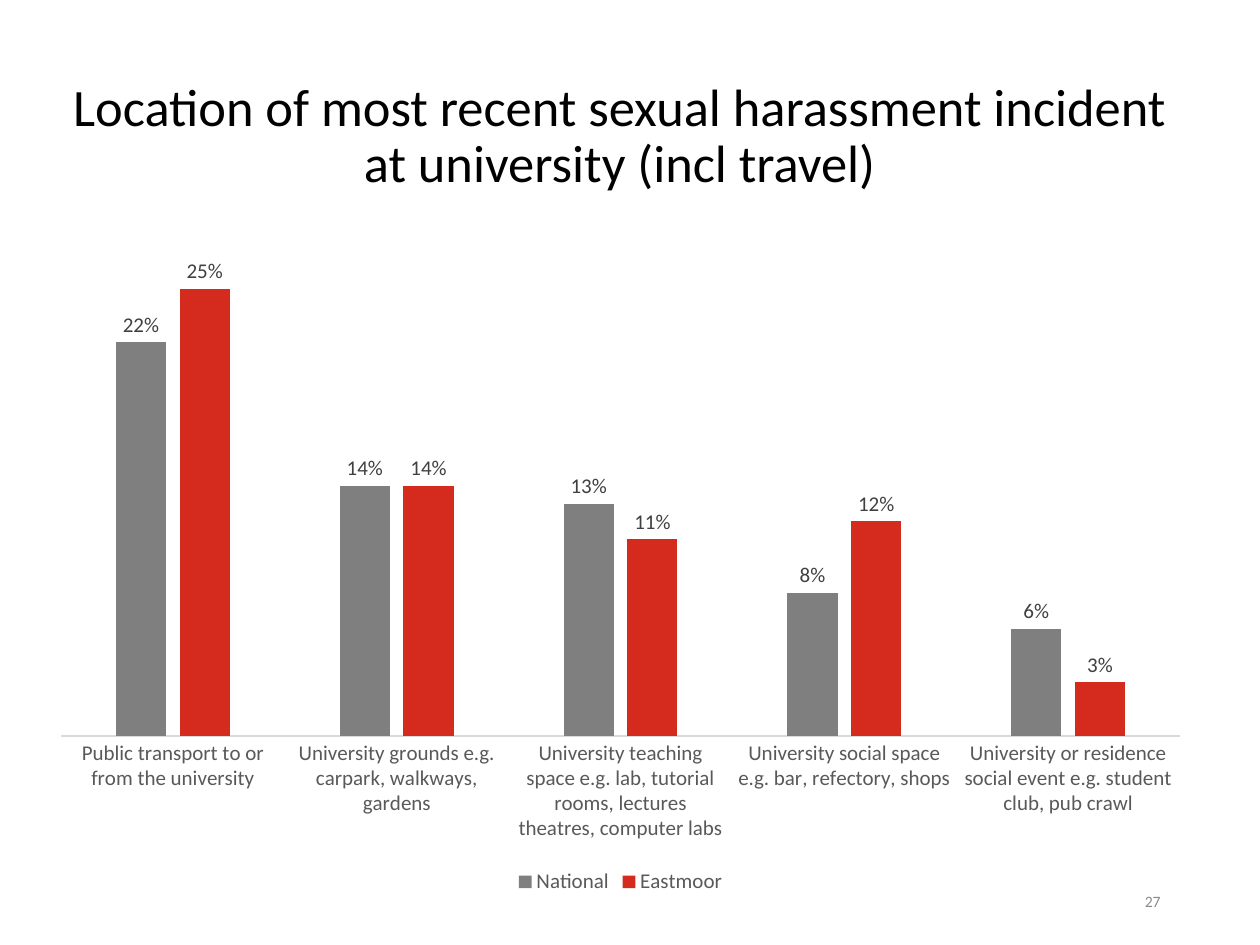
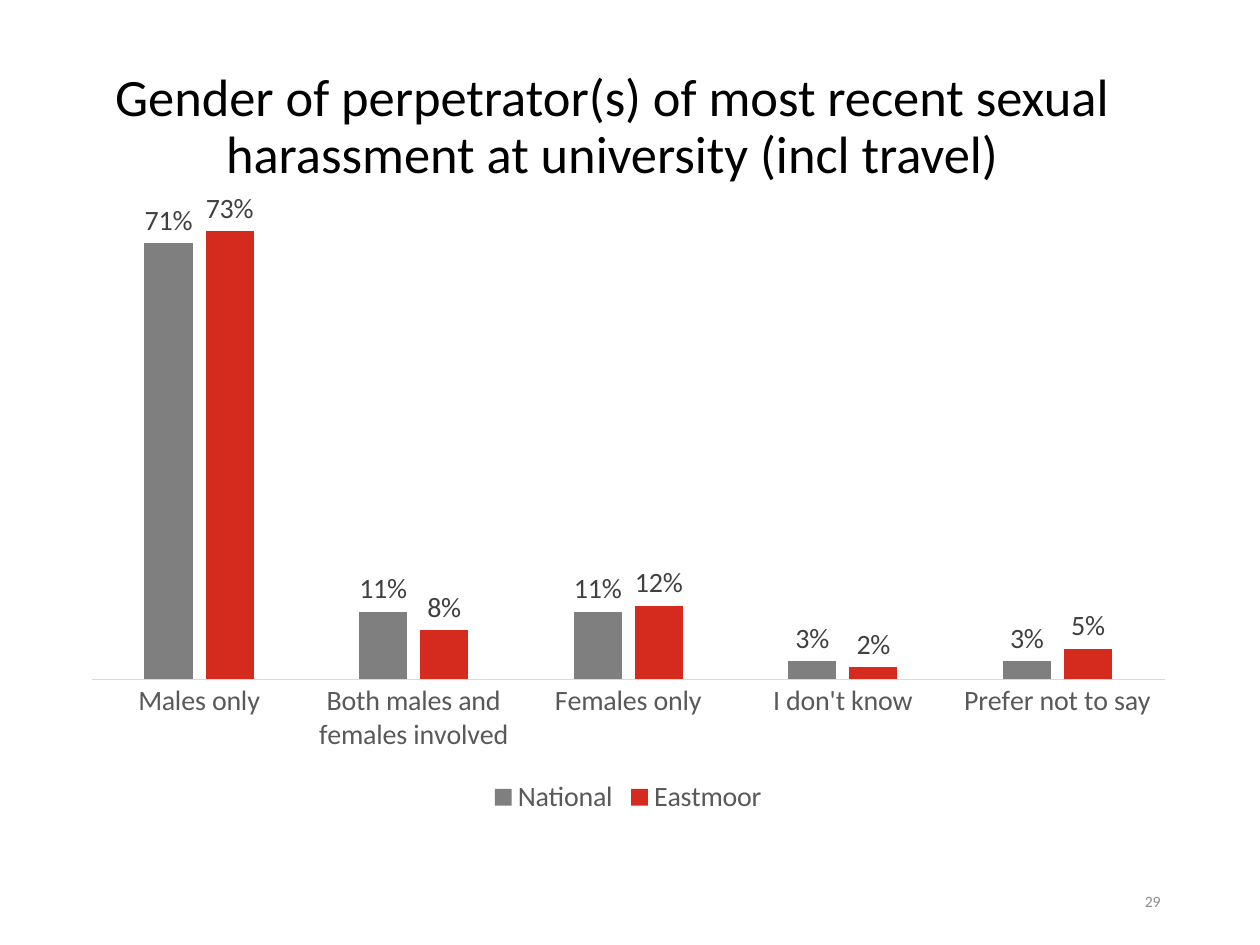
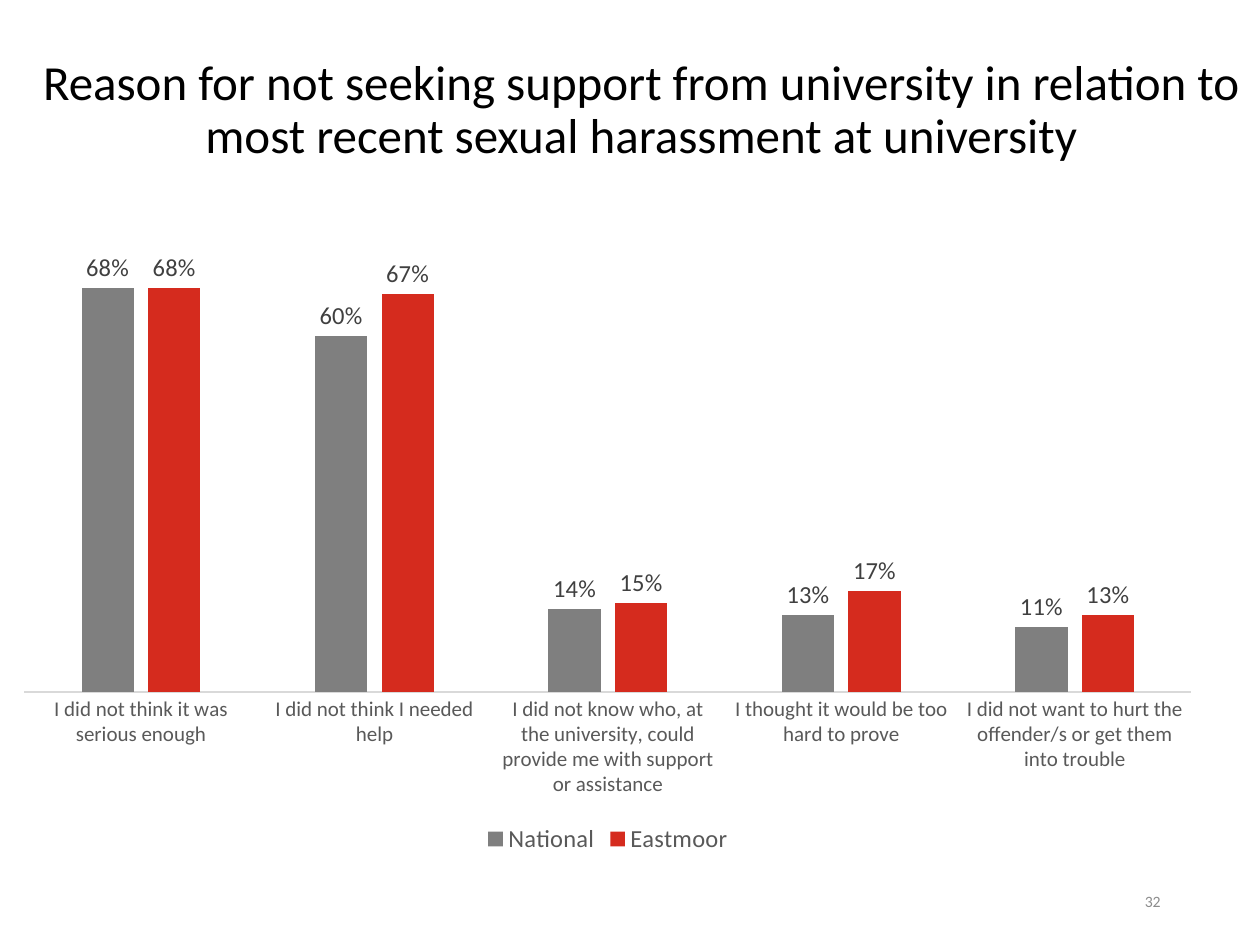
from pptx import Presentation
from pptx.chart.data import CategoryChartData
from pptx.dml.color import RGBColor
from pptx.enum.chart import XL_CHART_TYPE, XL_LABEL_POSITION, XL_LEGEND_POSITION, XL_TICK_MARK
from pptx.enum.text import MSO_ANCHOR, MSO_AUTO_SIZE, PP_ALIGN
from pptx.util import Cm, Pt

FONT = "Calibri"
BLACK, AXIS_TEXT, LABEL_TEXT = "000000", "595959", "404040"
AXIS_LINE, PAGE_NUMBER = "D9D9D9", "8C8C8C"
SERIES = [("National", "7F7F7F"), ("Eastmoor", "D52B1E")]
PERCENT = "0%"


def rgb(color):
    return RGBColor.from_string(color)


def style_font(font, size, color):
    font.name = FONT
    font.size = Pt(size)
    font.bold = False
    font.color.rgb = rgb(color)


def write_line(tf, text, size, color, align):
    tf.word_wrap = True
    tf.auto_size = MSO_AUTO_SIZE.NONE
    tf.vertical_anchor = MSO_ANCHOR.MIDDLE
    p = tf.paragraphs[0]
    p.alignment = align
    r = p.add_run()
    r.text = text
    style_font(r.font, size, color)
    return p


def set_title(s, text, box, size):
    sp = s.shapes.title
    sp.left, sp.top, sp.width, sp.height = [Cm(v) for v in box]
    tf = sp.text_frame
    tf.margin_left = tf.margin_right = Cm(0.18)
    tf.margin_top = tf.margin_bottom = Cm(0.1)
    p = write_line(tf, text, size, BLACK, PP_ALIGN.CENTER)
    p.line_spacing = 0.9


def add_page_number(s, number):
    sp = s.shapes.add_textbox(Cm(17.93), Cm(17.65), Cm(5.72), Cm(1.02))
    write_line(sp.text_frame, str(number), 9, PAGE_NUMBER, PP_ALIGN.RIGHT)


def add_comparison_chart(s, box, rows, top, size, axis_size):
    """Rows hold a category and one value for each entry in SERIES."""
    data = CategoryChartData(number_format=PERCENT)
    data.categories = [row[0] for row in rows]
    for i, (name, _) in enumerate(SERIES, start=1):
        data.add_series(name, [row[i] for row in rows])
    chart = s.shapes.add_chart(
        XL_CHART_TYPE.COLUMN_CLUSTERED, *[Cm(v) for v in box], data).chart
    chart.has_title = False
    style_font(chart.font, size, BLACK)

    chart.has_legend = True
    chart.legend.position = XL_LEGEND_POSITION.BOTTOM
    chart.legend.include_in_layout = False
    style_font(chart.legend.font, size, AXIS_TEXT)

    cat_axis = chart.category_axis
    cat_axis.major_tick_mark = XL_TICK_MARK.NONE
    cat_axis.format.line.color.rgb = rgb(AXIS_LINE)
    cat_axis.format.line.width = Pt(0.75)
    style_font(cat_axis.tick_labels.font, axis_size, AXIS_TEXT)

    val_axis = chart.value_axis
    val_axis.minimum_scale, val_axis.maximum_scale = 0, top
    val_axis.has_major_gridlines = False
    val_axis.visible = False

    plot = chart.plots[0]
    plot.gap_width, plot.overlap = 219, -27
    plot.vary_by_categories = False
    for series, (_, color) in zip(plot.series, SERIES):
        series.format.fill.solid()
        series.format.fill.fore_color.rgb = rgb(color)
        labels = series.data_labels
        labels.show_value = True
        labels.position = XL_LABEL_POSITION.OUTSIDE_END
        labels.number_format = PERCENT
        labels.number_format_is_linked = False
        style_font(labels.font, size, LABEL_TEXT)


def add_chart_slide(prs, number, title, title_box, title_size, **chart):
    s = prs.slides.add_slide(prs.slide_layouts[5])
    set_title(s, title, title_box, title_size)
    add_comparison_chart(s, **chart)
    add_page_number(s, number)


def main():
    prs = Presentation()
    prs.slide_width, prs.slide_height = Cm(25.4), Cm(19.05)

    add_chart_slide(
        prs, 27,
        "Location of most recent sexual harassment incident at university (incl travel)",
        (1.09, 1.85, 22.81, 1.85), 30,
        box=(0.76, 3.73, 23.5, 14.4), top=0.3, size=12, axis_size=12,
        rows=[
            ("Public transport to or from the university", 0.22, 0.25),
            ("University grounds e.g. carpark, walkways, gardens", 0.14, 0.14),
            ("University teaching space e.g. lab, tutorial rooms, lectures theatres, "
             "computer labs", 0.13, 0.11),
            ("University social space e.g. bar, refectory, shops", 0.08, 0.12),
            ("University or residence social event e.g. student club, pub crawl", 0.06, 0.03),
        ])

    add_chart_slide(
        prs, 29,
        "Gender of perpetrator(s) of most recent sexual harassment at university (incl travel)",
        (1.4, 1.65, 21.89, 1.85), 30,
        box=(1.4, 3.53, 22.53, 13), top=0.8, size=16, axis_size=16,
        rows=[
            ("Males only", 0.71, 0.73),
            ("Both males and females involved", 0.11, 0.08),
            ("Females only", 0.11, 0.12),
            ("I don't know", 0.03, 0.02),
            ("Prefer not to say", 0.03, 0.05),
        ])

    add_chart_slide(
        prs, 32,
        "Reason for not seeking support from university in relation to "
        "most recent sexual harassment at university",
        (0.53, 1.32, 24.79, 1.85), 28,
        box=(0, 4.11, 24.51, 13.21), top=0.8, size=14, axis_size=12,
        rows=[
            ("I did not think it was serious enough", 0.68, 0.68),
            ("I did not think I needed help", 0.6, 0.67),
            ("I did not know who, at the university, could provide me with support "
             "or assistance", 0.14, 0.15),
            ("I thought it would be too hard to prove", 0.13, 0.17),
            ("I did not want to hurt the offender/s or get them into trouble", 0.11, 0.13),
        ])

    prs.save("out.pptx")


if __name__ == "__main__":
    main()
